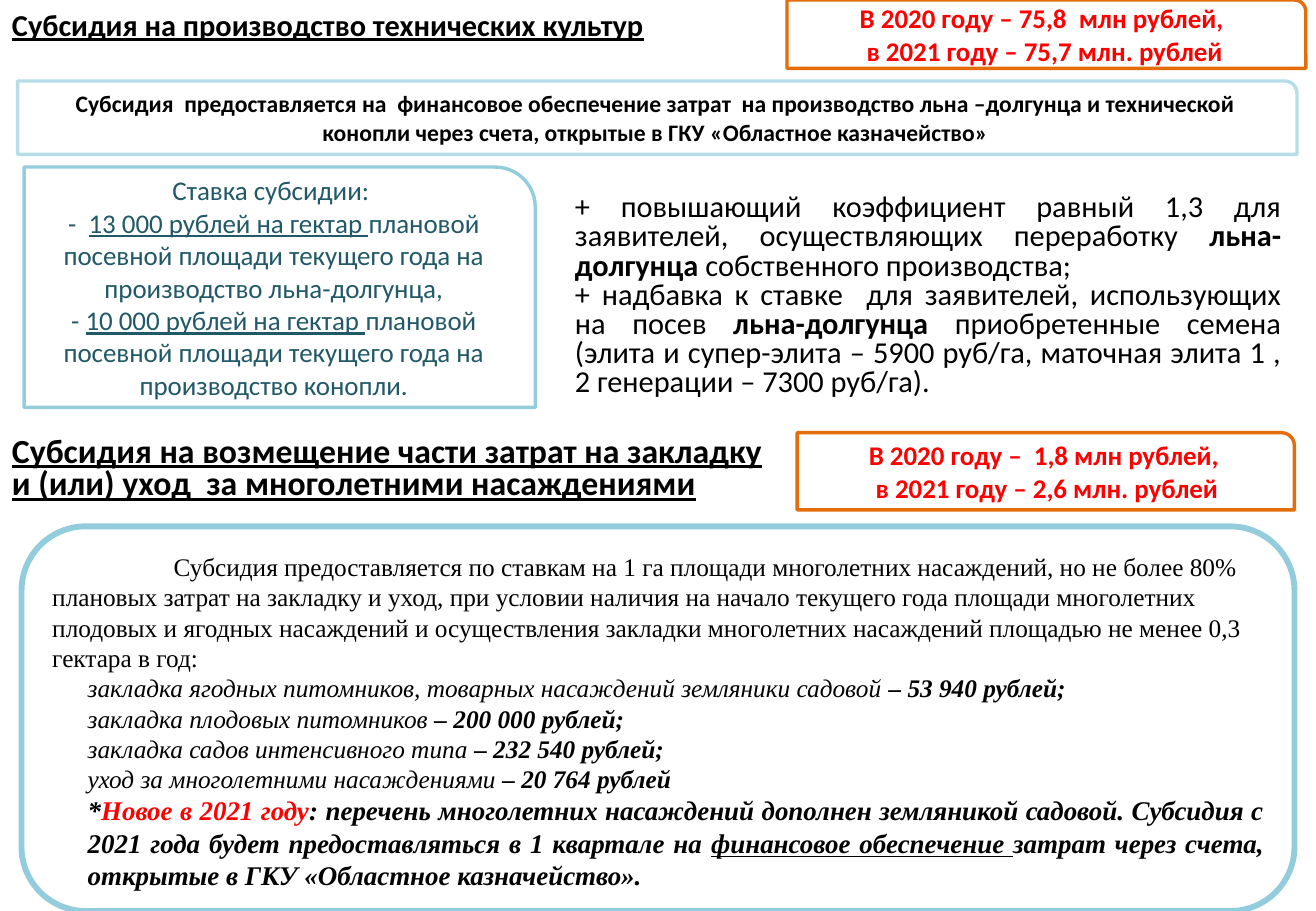
from dataclasses import dataclass

from pptx import Presentation
from pptx.dml.color import RGBColor as RGB
from pptx.enum.shapes import MSO_SHAPE as SHAPE
from pptx.enum.text import MSO_ANCHOR as ANCHOR, PP_ALIGN as ALIGN
from pptx.util import Emu, Pt


@dataclass(frozen=True)
class Theme:
    sans: str = "Calibri"
    serif: str = "Times New Roman"
    black: RGB = RGB(0, 0, 0)
    white: RGB = RGB(255, 255, 255)
    red: RGB = RGB(255, 0, 0)
    teal: RGB = RGB(0x21, 0x59, 0x68)
    orange: RGB = RGB(0xE4, 0x6C, 0x0A)
    pale_blue: RGB = RGB(0xB7, 0xDE, 0xE8)
    blue: RGB = RGB(0x93, 0xCD, 0xDD)
    heading: int = 20
    body: int = 18
    panel: int = 16
    detail: int = 15
    note: int = 14


T = Theme()
EMU_PER_PX = 9525


def px(n):
    return Emu(n * EMU_PER_PX)


def add_paragraph(tf, runs, size, color=T.black, name=T.sans, bold=None,
                  italic=None, underline=None, align=None, spacing=None,
                  left=0, first=0):
    """Runs are plain strings or (text, flag): b bold, u underlined, r red."""
    p = tf.paragraphs[0]
    if p.runs:
        p = tf.add_paragraph()
    f = p.font
    f.size, f.name, f.color.rgb = Pt(size), name, color
    f.bold, f.italic, f.underline = bold, italic, underline
    p.alignment, p.line_spacing = align, spacing
    if left or first:
        pPr = p._p.get_or_add_pPr()
        pPr.set("marL", str(px(left)))
        pPr.set("indent", str(px(first)))
    for run in runs:
        text, flag = (run, "") if isinstance(run, str) else run
        r = p.add_run()
        r.text = text
        if flag == "b":
            r.font.bold = True
        elif flag == "u":
            r.font.underline = True
        elif flag == "r":
            r.font.color.rgb = T.red


def add_text(s, box, paragraphs, size, **style):
    tf = s.shapes.add_textbox(*map(px, box)).text_frame
    tf.word_wrap = True
    for runs in paragraphs:
        add_paragraph(tf, runs, size, **style)


def add_panel(s, box, line, width=2, kind=SHAPE.ROUND_1_RECTANGLE):
    sp = s.shapes.add_shape(kind, *map(px, box))
    sp.shadow.inherit = False
    sp.fill.solid()
    sp.fill.fore_color.rgb = T.white
    sp.line.color.rgb = line
    sp.line.width = Pt(width)
    tf = sp.text_frame
    tf.word_wrap = True
    tf.vertical_anchor = ANCHOR.MIDDLE
    return tf


def add_centred_panel(s, box, line, paragraphs, size, **style):
    tf = add_panel(s, box, line)
    for runs in paragraphs:
        add_paragraph(tf, runs, size, align=ALIGN.CENTER, **style)


def add_budget(s, box, *lines):
    add_centred_panel(s, box, T.orange, [[line] for line in lines],
                      T.panel, color=T.red, bold=True)


def add_perennials(s, box):
    tf = add_panel(s, box, T.blue, 3.5, SHAPE.ROUNDED_RECTANGLE)
    tf.vertical_anchor = ANCHOR.TOP
    add_paragraph(tf, [
        "Субсидия предоставляется по ставкам на 1 га площади многолетних насаждений, "
        "но не более 80% плановых затрат на закладку и уход, при условии наличия на "
        "начало текущего года площади многолетних плодовых и ягодных насаждений и "
        "осуществления закладки многолетних насаждений площадью не менее 0,3 гектара в год:",
    ], T.detail, name=T.serif, align=ALIGN.LEFT, first=96)
    item = dict(name=T.serif, italic=True, align=ALIGN.JUSTIFY, left=28)
    rates = [
        ("закладка ягодных питомников, товарных насаждений земляники садовой ",
         "– 53 940 рублей;"),
        ("закладка плодовых питомников ", "– 200 000 рублей;"),
        ("закладка садов интенсивного типа ", "– 232 540 рублей;"),
        ("уход за многолетними насаждениями ", "– 20 764 рублей"),
    ]
    for work, rate in rates:
        add_paragraph(tf, [work, (rate, "b")], T.detail, **item)
    add_paragraph(tf, [
        "*", ("Новое в 2021 году", "r"),
        ": перечень многолетних насаждений дополнен земляникой садовой. Субсидия с "
        "2021 года будет предоставляться в 1 квартале на ",
        ("финансовое обеспечение ", "u"),
        "затрат через счета, открытые в ГКУ «Областное казначейство».",
    ], T.panel, bold=True, **item)


def main():
    prs = Presentation()
    prs.slide_width, prs.slide_height = px(1040), px(720)
    s = prs.slides.add_slide(prs.slide_layouts[6])

    add_text(s, (0, 0, 635, 42), [["Субсидия на производство технических культур"]],
             T.body, bold=True, underline=True)
    add_budget(s, (622, 0, 410, 54),
               "В 2020 году – 75,8  млн рублей, ", "в 2021 году – 75,7 млн. рублей")
    add_centred_panel(s, (14, 64, 1011, 58), T.pale_blue, [[
        "Субсидия  предоставляется на  финансовое обеспечение затрат  на производство "
        "льна –долгунца и технической конопли через счета, открытые в ГКУ "
        "«Областное казначейство»"]], T.note, bold=True)
    add_centred_panel(s, (19, 132, 404, 190), T.blue, [
        ["Ставка субсидии: "],
        ["-  ", ("13 000 рублей на гектар ", "u"),
         "плановой посевной площади текущего года на производство льна-долгунца,"],
        ["- ", ("10 000 рублей на гектар ", "u"),
         "плановой посевной площади текущего года на производство конопли."],
    ], T.panel, color=T.teal)
    add_text(s, (445, 149, 577, 196), [
        ["+ повышающий коэффициент равный 1,3 для заявителей, осуществляющих переработку ",
         ("льна-долгунца ", "b"), "собственного производства;"],
        ["+ надбавка к ставке  для заявителей, использующих на посев ",
         ("льна-долгунца", "b"),
         " приобретенные семена (элита и супер-элита – 5900 руб/га, "
         "маточная элита 1 , 2 генерации – 7300 руб/га). "],
    ], T.body, align=ALIGN.JUSTIFY, spacing=0.8)

    add_text(s, (0, 341, 624, 61), [
        ["Субсидия на возмещение части затрат на закладку"],
        ["и (или) уход  за многолетними насаждениями"],
    ], T.heading, bold=True, underline=True, spacing=0.8)
    add_budget(s, (630, 342, 393, 61),
               "В 2020 году –  1,8 млн рублей,", " в 2021 году – 2,6 млн. рублей")
    add_perennials(s, (17, 416, 1006, 304))

    prs.save("out.pptx")


if __name__ == "__main__":
    main()
